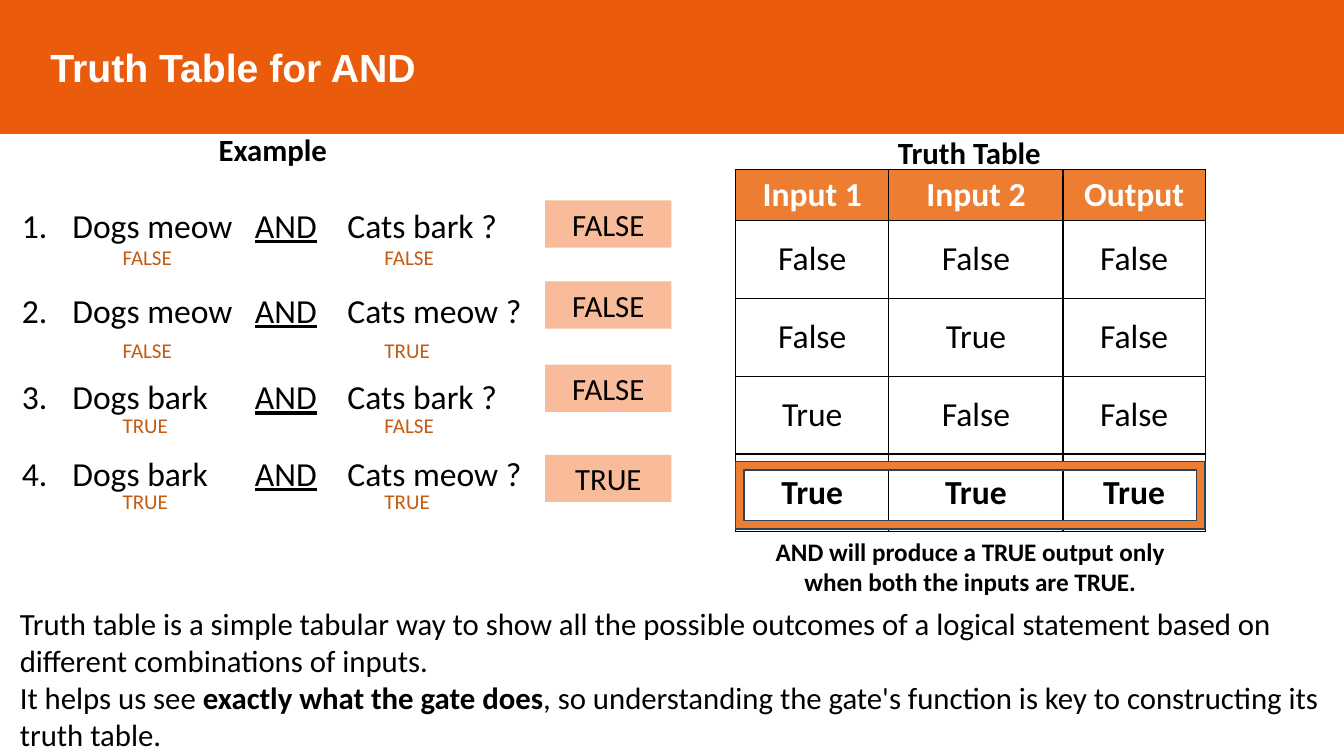
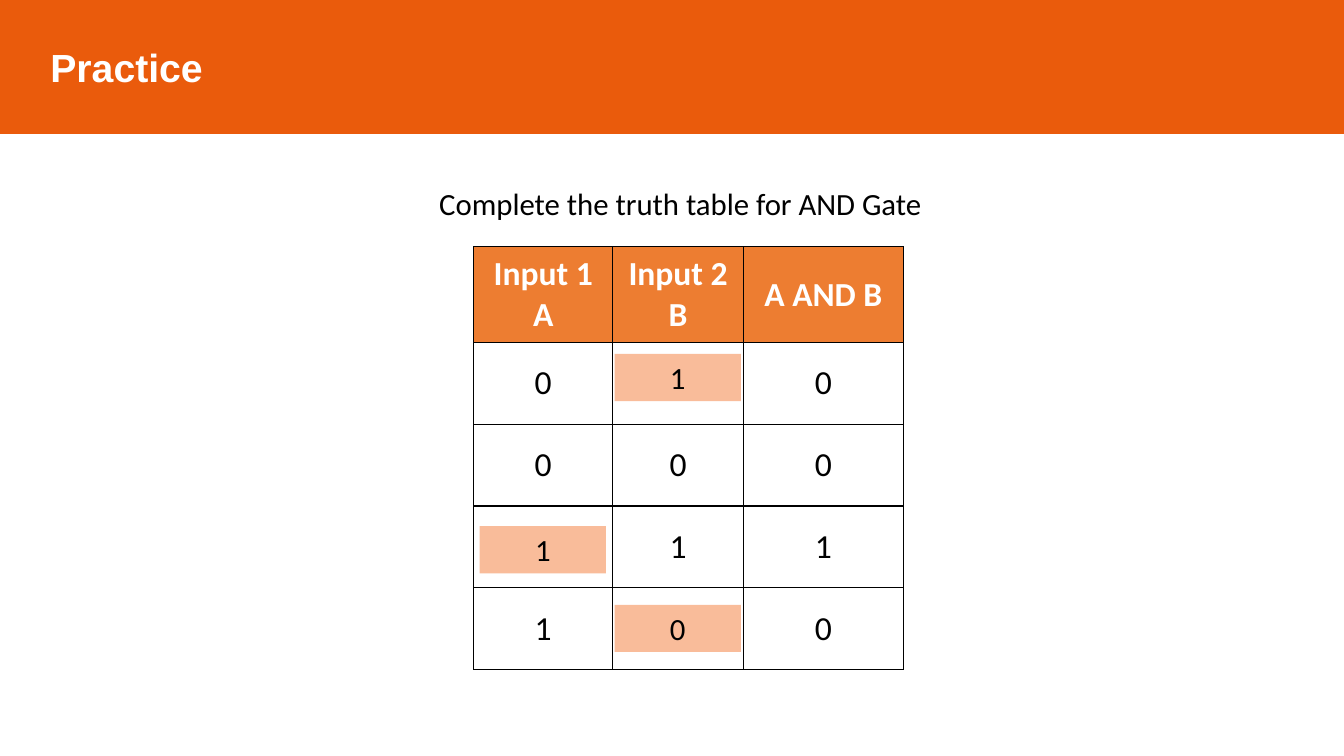
"""Build two slides on the AND truth table."""
from lxml.etree import SubElement
from pptx import Presentation
from pptx.dml.color import RGBColor
from pptx.enum.shapes import MSO_SHAPE as SHAPE
from pptx.enum.text import MSO_ANCHOR as ANCHOR, MSO_AUTO_SIZE as AUTO_SIZE, PP_ALIGN as ALIGN
from pptx.oxml.ns import qn
from pptx.util import Cm, Pt

BAND = RGBColor(0xEA, 0x5B, 0x0C)
HEADER = RGBColor(0xED, 0x7D, 0x31)
BADGE = RGBColor(0xF9, 0xBC, 0x9A)
VALUE = RGBColor(0xC5, 0x5A, 0x11)
FRAME_EDGE = RGBColor(0x28, 0x44, 0x5D)
BLACK = RGBColor(0, 0, 0)
WHITE = RGBColor(0xFF, 0xFF, 0xFF)

PAGE_WIDTH, PAGE_HEIGHT = Cm(33.87), Cm(19.05)
BAND_HEIGHT = Cm(3.35)
TITLE_ONLY, TITLE_AND_BODY = 5, 1

TEXT = {"name": "Calibri", "size": Pt(22), "bold": False, "color": BLACK}
BOLD = TEXT | {"bold": True}
TITLE = {"name": "Arial", "size": Pt(28), "bold": True, "color": WHITE}
CELL = TEXT | {"size": Pt(24)}
CELL_HEADER = CELL | {"bold": True, "color": WHITE}
CELL_BOLD = CELL | {"bold": True}
STATEMENT = TEXT | {"size": Pt(24)}
OPERATOR = STATEMENT | {"underline": True}
INPUT_VALUE = TEXT | {"size": Pt(15), "color": VALUE}
CAPTION = BOLD | {"size": Pt(18)}


def apply_format(font, values):
    """Set font attributes from a dict of format values."""
    for key, value in values.items():
        if key == "color":
            font.color.rgb = value
        else:
            setattr(font, key, value)


def write_paragraph(para, spans, **layout):
    """Fill a paragraph with (text, format) spans and set its layout."""
    for key, value in layout.items():
        setattr(para, key, value)
    for text, values in spans:
        span = para.add_run()
        span.text = text
        apply_format(span.font, values)


def next_paragraph(frame, index):
    """Return the first paragraph, or a new one after it."""
    return frame.paragraphs[0] if index == 0 else frame.add_paragraph()


def place(shape, left, top, width, height):
    """Move and size a shape."""
    shape.left, shape.top, shape.width, shape.height = left, top, width, height


def add_tabs(para, *positions):
    """Add left tab stops to a paragraph."""
    tabs = SubElement(para._p.get_or_add_pPr(), qn("a:tabLst"))
    for position in positions:
        SubElement(tabs, qn("a:tab"), pos=str(int(position)), algn="l")


def add_numbering(para, indent):
    """Number a paragraph with a hanging indent."""
    props = para._p.get_or_add_pPr()
    props.set("marL", str(int(indent)))
    props.set("indent", str(-int(indent)))
    SubElement(props, qn("a:buFont"), typeface="+mj-lt")
    SubElement(props, qn("a:buAutoNum"), type="arabicPeriod")


def add_page(deck, title, layout):
    """Add a slide with its title in the band."""
    page = deck.slides.add_slide(deck.slide_layouts[layout])
    band = page.shapes.title
    place(band, 0, 0, PAGE_WIDTH, BAND_HEIGHT)
    band.fill.solid()
    band.fill.fore_color.rgb = BAND
    band.line.color.rgb = BAND
    band.line.width = Pt(1)
    frame = band.text_frame
    frame.margin_left = Cm(1.27)
    frame.vertical_anchor = ANCHOR.MIDDLE
    write_paragraph(frame.paragraphs[0], [(title, TITLE)], alignment=ALIGN.LEFT)
    return page


def add_text(page, left, top, width, height, paragraphs, **layout):
    """Add a wrapping text box with one list of spans per paragraph."""
    box = page.shapes.add_textbox(Cm(left), Cm(top), Cm(width), Cm(height))
    frame = box.text_frame
    frame.word_wrap = True
    for index, spans in enumerate(paragraphs):
        write_paragraph(next_paragraph(frame, index), spans, **layout)


def add_plain_shape(page, kind, left, top, width, height, fill):
    """Add a filled shape without outline or shadow."""
    shape = page.shapes.add_shape(kind, Cm(left), Cm(top), Cm(width), Cm(height))
    shape.shadow.inherit = False
    shape.fill.solid()
    shape.fill.fore_color.rgb = fill
    shape.line.fill.background()
    return shape


def add_badge(page, left, top, text):
    """Add an answer badge."""
    badge = add_plain_shape(page, SHAPE.RECTANGLE, left, top, 3.18, 1.19, BADGE)
    badge.text_frame.vertical_anchor = ANCHOR.TOP
    write_paragraph(badge.text_frame.paragraphs[0], [(text, TEXT)], alignment=ALIGN.CENTER)


def add_borders(cell):
    """Draw black lines on the four sides of a cell."""
    props = cell._tc.get_or_add_tcPr()
    for index, side in enumerate(("lnL", "lnR", "lnT", "lnB")):
        line = props.makeelement(qn(f"a:{side}"), {"w": str(int(Pt(1)))})
        fill = SubElement(line, qn("a:solidFill"))
        SubElement(fill, qn("a:srgbClr"), val=str(BLACK))
        props.insert(index, line)


def add_truth_table(page, left, top, widths, heights, rows, bold_rows=()):
    """Add a bordered table with an orange header row."""
    graphic = page.shapes.add_table(len(rows), len(widths), Cm(left), Cm(top),
                                    Cm(sum(widths)), Cm(sum(heights)))
    table = graphic.table
    table.first_row = table.horz_banding = False
    for column, width in zip(table.columns, widths):
        column.width = Cm(width)
    for index, (row, height, texts) in enumerate(zip(table.rows, heights, rows)):
        row.height = Cm(height)
        values = CELL_HEADER if index == 0 else CELL_BOLD if index in bold_rows else CELL
        for cell, text in zip(row.cells, texts):
            cell.fill.solid()
            cell.fill.fore_color.rgb = HEADER if index == 0 else WHITE
            cell.vertical_anchor = ANCHOR.MIDDLE
            add_borders(cell)
            for number, line in enumerate(text.splitlines()):
                write_paragraph(next_paragraph(cell.text_frame, number), [(line, values)],
                                alignment=ALIGN.CENTER)


def fill_statements(body, statements):
    """Write the numbered AND statements into the body placeholder."""
    place(body, Cm(0.3), Cm(4.52), Cm(13.87), Cm(8.76))
    frame = body.text_frame
    frame.auto_size = AUTO_SIZE.NONE
    frame.vertical_anchor = ANCHOR.TOP
    for index, (first, second, gap) in enumerate(statements):
        para = next_paragraph(frame, index)
        add_numbering(para, Cm(1.27))
        add_tabs(para, Cm(5.87), Cm(8.2))
        spans = [(f"{first}\t", STATEMENT), ("AND", OPERATOR), (f"\t{second} ?", STATEMENT)]
        write_paragraph(para, spans, line_spacing=1.5, space_before=Pt(gap))


def add_input_values(page, pairs):
    """Add the truth values below the two halves of each statement."""
    box = page.shapes.add_textbox(Cm(0.3), Cm(6.03), Cm(13.87), Cm(7.1))
    frame = box.text_frame
    frame.word_wrap = True
    for index, (first, second, gap) in enumerate(pairs):
        para = next_paragraph(frame, index)
        add_tabs(para, Cm(2.54), Cm(9.14))
        write_paragraph(para, [(f"\t{first}\t{second}", INPUT_VALUE)], space_before=Pt(gap))


def build_explanation(deck):
    """Build the slide that explains the AND truth table."""
    page = add_page(deck, "Truth Table for AND", TITLE_AND_BODY)
    left, width = 18.54, 11.83
    add_truth_table(page, left, 4.27, (3.86, 4.39, 3.58), [1.27] + [1.96] * 4, [
        ("Input 1", "Input 2", "Output"),
        ("False", "False", "False"),
        ("False", "True", "False"),
        ("True", "False", "False"),
        ("True", "True", "True"),
    ], bold_rows=(4,))
    fill_statements(page.placeholders[1], [
        ("Dogs meow", "Cats bark", 0),
        ("Dogs meow", "Cats meow", 17.5),
        ("Dogs bark", "Cats bark", 18.5),
        ("Dogs bark", "Cats meow", 11.5),
    ])
    for top, answer in ((5.05, "FALSE"), (7.09, "FALSE"), (9.19, "FALSE"), (11.46, "TRUE")):
        add_badge(page, 13.74, top, answer)
    add_input_values(page, [
        ("FALSE", "FALSE", 0),
        ("FALSE", "TRUE", 48.5),
        ("TRUE", "FALSE", 36),
        ("TRUE", "TRUE", 36),
    ])
    add_text(page, 0.25, 15.11, 33.55, 4.01, [
        [("Truth table is a simple tabular way to show all the possible outcomes of a "
          "logical statement based on different combinations of inputs.", TEXT)],
        [("It helps us see ", TEXT), ("exactly what the gate does", BOLD),
         (", so understanding the gate's function is key to constructing its truth table.",
          TEXT)],
    ])
    frame = add_plain_shape(page, SHAPE.FRAME, left, 11.63, width, 1.7, HEADER)
    frame.line.color.rgb = FRAME_EDGE
    frame.line.width = Pt(1)
    add_text(page, left, 13.39, width, 1.8, [
        [("AND will produce a TRUE output only when both the inputs are TRUE.", CAPTION)],
    ], alignment=ALIGN.CENTER)
    add_text(page, 22.38, 3.25, 4.14, 1.19, [[("Truth Table", BOLD)]])
    add_text(page, 5.26, 3.18, 4.14, 1.19, [[("Example", BOLD)]])


def build_practice(deck):
    """Build the slide with the table to complete."""
    page = add_page(deck, "Practice", TITLE_ONLY)
    add_text(page, 10.82, 4.06, 12.85, 1.52,
             [[("Complete the truth table for AND Gate", TEXT)]], line_spacing=1.5)
    add_truth_table(page, 11.94, 6.22, (3.5, 3.3, 4.02), [2.41] + [2.06] * 4, [
        ("Input 1\nA", "Input 2\nB", "A AND B"),
        ("0", "", "0"),
        ("0", "0", "0"),
        ("", "1", "1"),
        ("1", "", "0"),
    ])
    for left, top, answer in ((15.49, 8.92, "1"), (12.09, 13.26, "1"), (15.49, 15.24, "0")):
        add_badge(page, left, top, answer)


def main():
    """Build and save the deck."""
    deck = Presentation()
    deck.slide_width, deck.slide_height = PAGE_WIDTH, PAGE_HEIGHT
    build_explanation(deck)
    build_practice(deck)
    deck.save("out.pptx")


if __name__ == "__main__":
    main()
